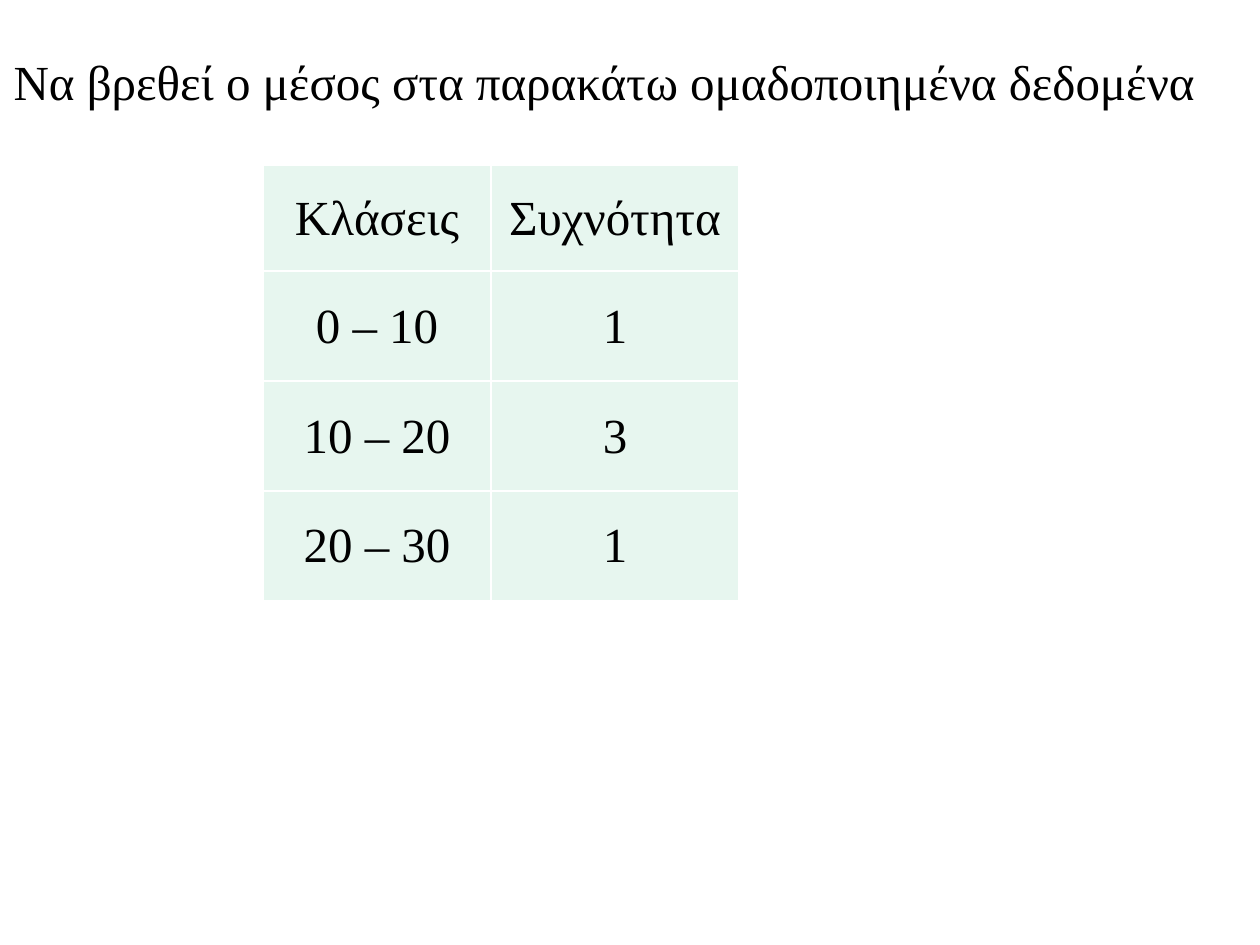
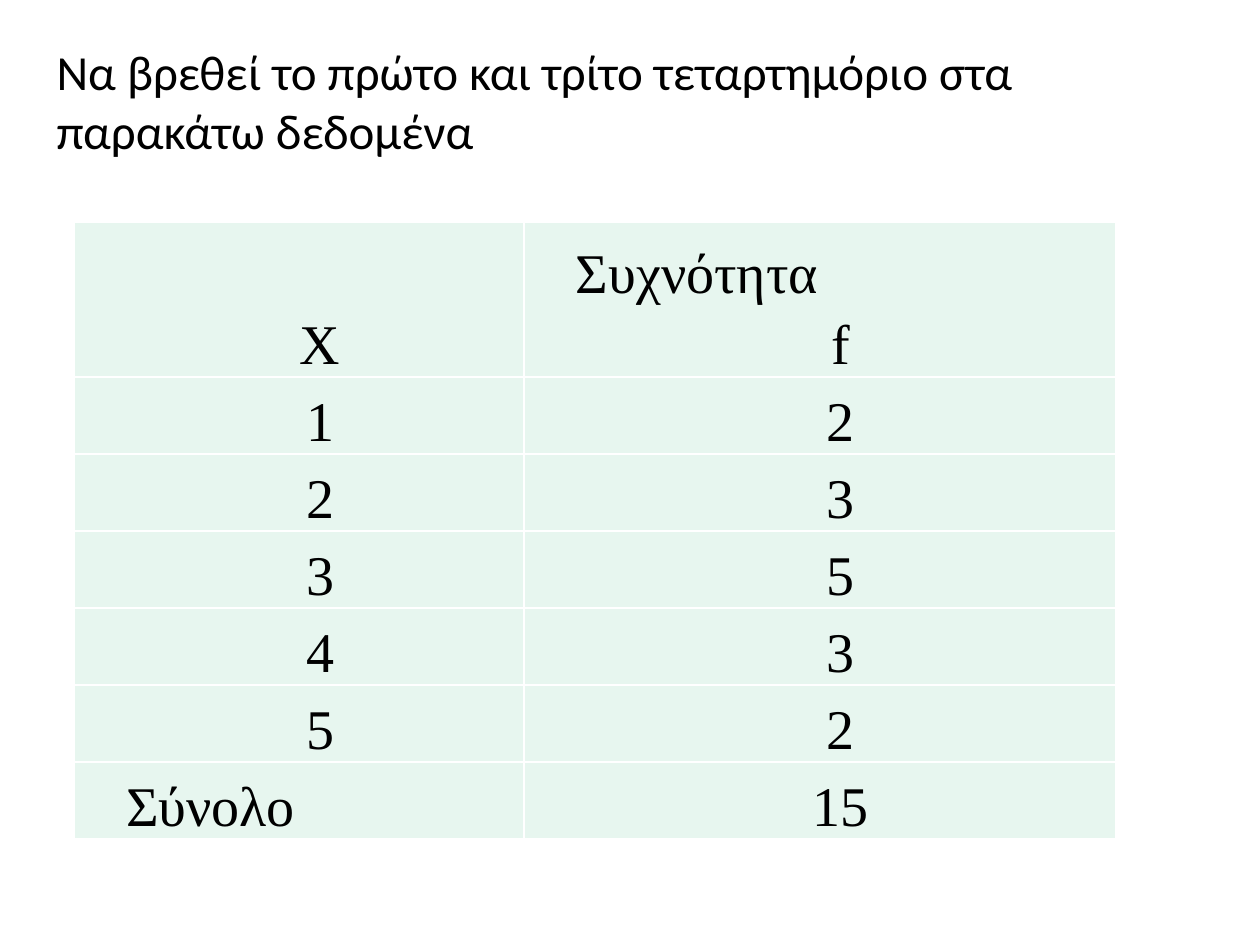
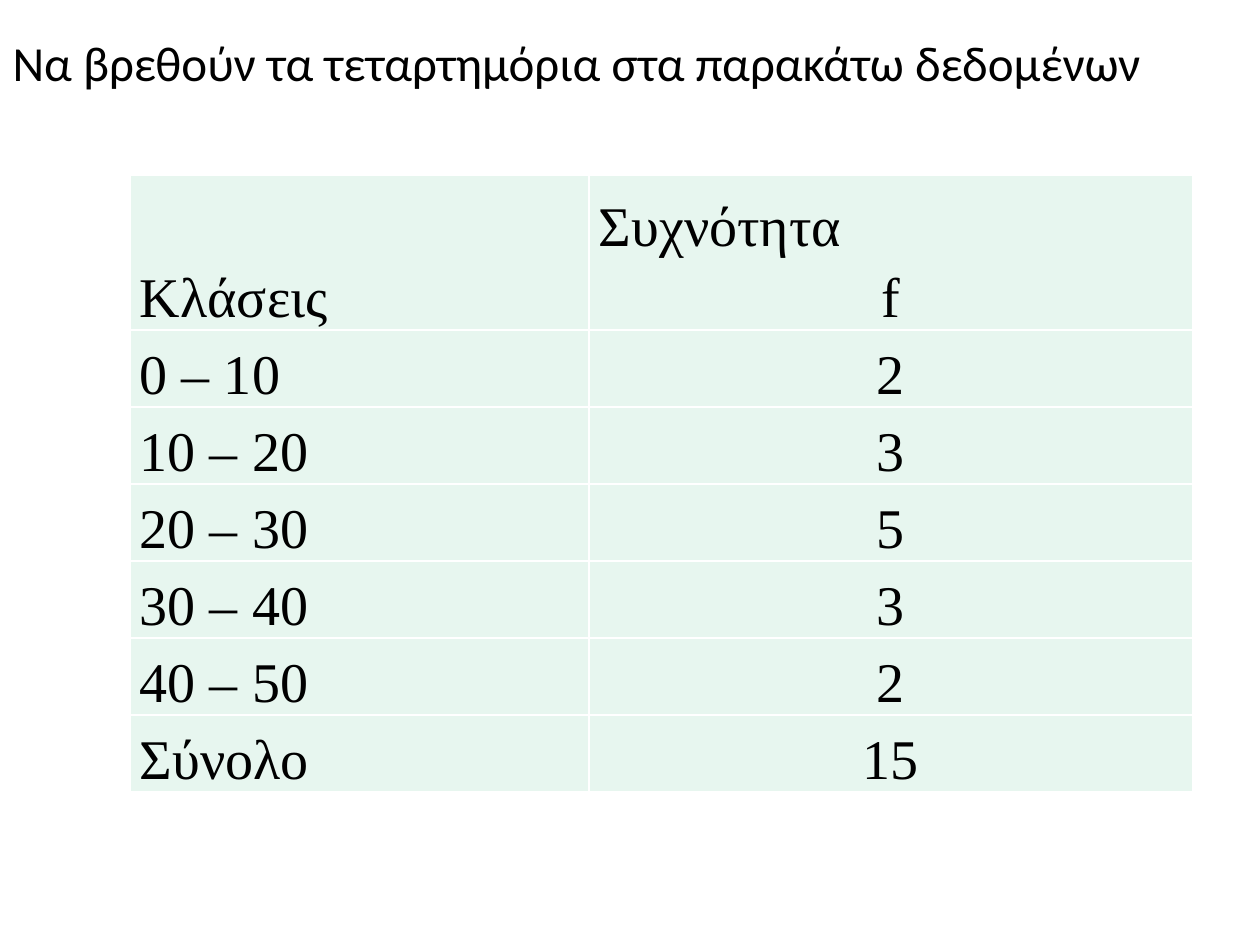
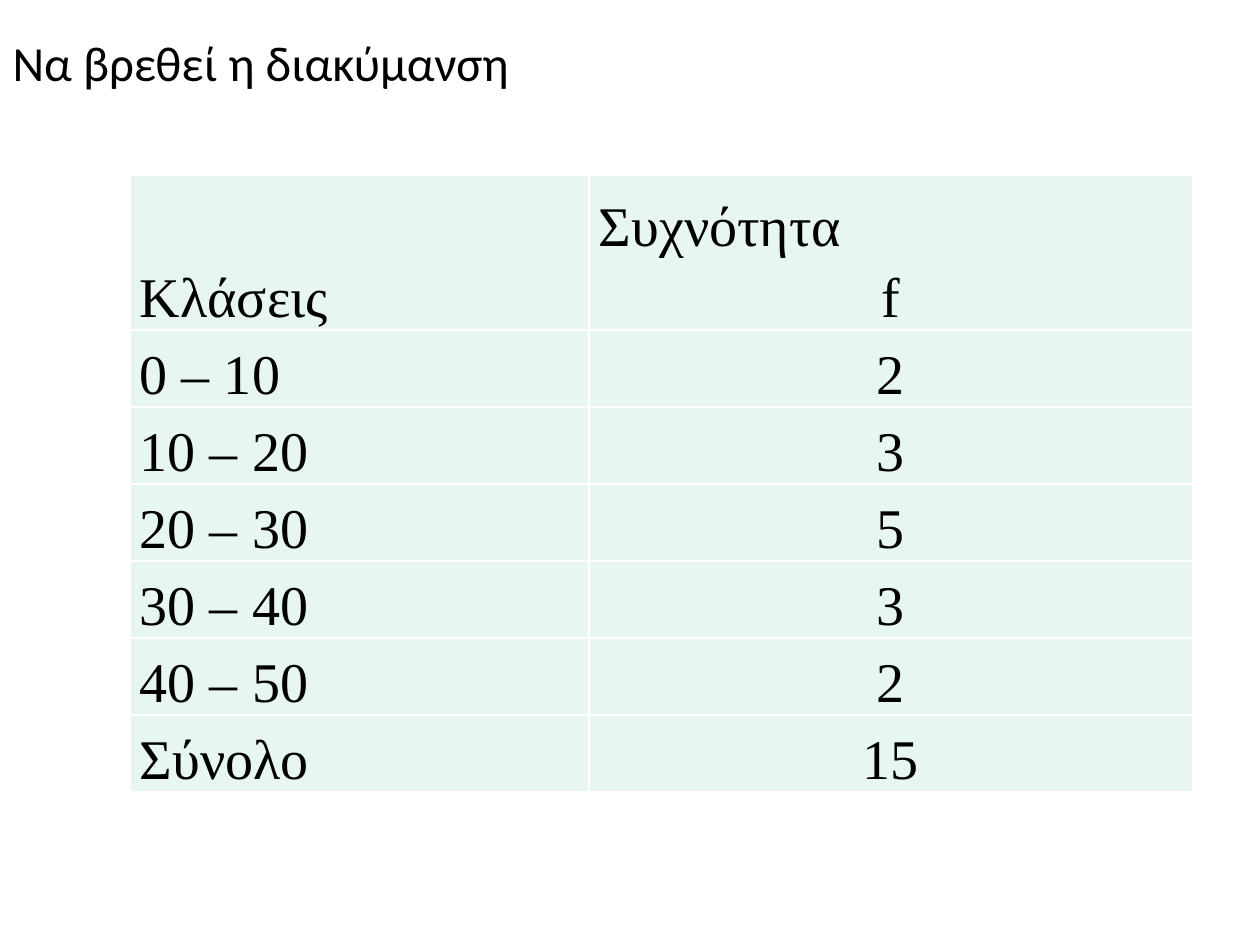
from lxml import etree
from pptx import Presentation
from pptx.dml.color import RGBColor
from pptx.enum.text import MSO_ANCHOR, MSO_AUTO_SIZE, PP_ALIGN
from pptx.oxml.ns import qn
from pptx.util import Emu, Pt

BLACK = RGBColor(0x00, 0x00, 0x00)
WHITE = RGBColor(0xFF, 0xFF, 0xFF)
MINT = RGBColor(0xE7, 0xF6, 0xEF)
SERIF = "Times New Roman"
SANS = "Calibri"


def px(length):
    """Convert pixels (126 to the inch) to EMU."""
    return Emu(round(length * 914400 / 126))


def add_borders(cell):
    """Draw a thin white line on every side of a table cell."""
    cell_properties = cell._tc.get_or_add_tcPr()
    for side in ("a:lnL", "a:lnR", "a:lnT", "a:lnB"):
        line = etree.SubElement(cell_properties, qn(side), w=str(Pt(1)))
        fill = etree.SubElement(line, qn("a:solidFill"))
        etree.SubElement(fill, qn("a:srgbClr"), val=str(WHITE))


# Data of the exercises
mean_rows = [("Κλάσεις", "Συχνότητα"), ("0 – 10", "1"), ("10 – 20", "3"), ("20 – 30", "1")]
frequencies = ["Συχνότητα\nf", "2", "3", "5", "3", "2", "15"]
value_rows = list(zip(["Χ", "1", "2", "3", "4", "5", "Σύνολο"], frequencies))
classes = [f"{start} – {start + 10}" for start in range(0, 50, 10)]
class_rows = list(zip(["Κλάσεις", *classes, "Σύνολο"], frequencies))

# Table styles: the roomy one centres everything, the dense ones only short entries
roomy = dict(size=28, anchor=MSO_ANCHOR.MIDDLE, margins=(1, 1, 1, 0), spacing=None,
             indent=0, longest_centred=20, row_heights=(106, 110))
dense = dict(size=32, anchor=MSO_ANCHOR.BOTTOM, margins=(10, 0, 10, 0), spacing=1.15,
             indent=0, longest_centred=2, row_heights=(155, 77))
indented = dict(dense, indent=42)

# Question, its font and box, table corner, column widths, rows and style
exercises = [
    ("Να βρεθεί ο μέσος στα παρακάτω ομαδοποιημένα δεδομένα", SERIF,
     (1, 45, 1231, 72), (263, 165), (228, 248), mean_rows, roomy),
    ("Να βρεθεί το πρώτο και τρίτο τεταρτημόριο στα\nπαρακάτω δεδομένα", SANS,
     (44, 35, 1003, 183), (74, 222), (450, 592), value_rows, indented),
    ("Να βρεθούν τα τεταρτημόρια στα παρακάτω δεδομένων", SANS,
     (0, 26, 1189, 123), (130, 175), (459, 604), class_rows, dense),
    ("Να βρεθεί η διακύμανση", SANS,
     (0, 26, 527, 123), (130, 175), (459, 604), class_rows, dense),
]

presentation = Presentation()
presentation.slide_width = px(1260)
presentation.slide_height = px(945)
title_only = presentation.slide_layouts[5]

for question, question_font, question_box, corner, widths, rows, style in exercises:
    slide = presentation.slides.add_slide(title_only)

    # Question
    title = slide.shapes.title
    title.left, title.top, title.width, title.height = map(px, question_box)
    title.text_frame.text = question
    title.text_frame.word_wrap = True
    title.text_frame.auto_size = MSO_AUTO_SIZE.NONE
    title.text_frame.vertical_anchor = MSO_ANCHOR.TOP
    for paragraph in title.text_frame.paragraphs:
        paragraph.alignment = PP_ALIGN.LEFT
        for run in paragraph.runs:
            run.font.name = question_font
            run.font.size = Pt(28)
            run.font.color.rgb = BLACK

    # Frequency table
    header_height, row_height = style["row_heights"]
    heights = [header_height] + [row_height] * (len(rows) - 1)
    table = slide.shapes.add_table(len(rows), 2, *map(px, corner),
                                   px(sum(widths)), px(sum(heights))).table
    table.first_row = False
    table.horz_banding = False
    for column, width in zip(table.columns, widths):
        column.width = px(width)
    for row, height in zip(table.rows, heights):
        row.height = px(height)

    for row, entries in zip(table.rows, rows):
        for cell, entry in zip(row.cells, entries):
            add_borders(cell)
            cell.fill.solid()
            cell.fill.fore_color.rgb = MINT
            cell.vertical_anchor = style["anchor"]
            (cell.margin_left, cell.margin_top,
             cell.margin_right, cell.margin_bottom) = map(px, style["margins"])
            cell.text_frame.text = entry
            for paragraph in cell.text_frame.paragraphs:
                centred = len(paragraph.text) <= style["longest_centred"]
                paragraph.alignment = PP_ALIGN.CENTER if centred else PP_ALIGN.LEFT
                paragraph.line_spacing = style["spacing"]
                paragraph._p.get_or_add_pPr().set("marL", str(px(style["indent"])))
                for run in paragraph.runs:
                    run.font.name = SERIF
                    run.font.size = Pt(style["size"])
                    run.font.color.rgb = BLACK

presentation.save("out.pptx")
